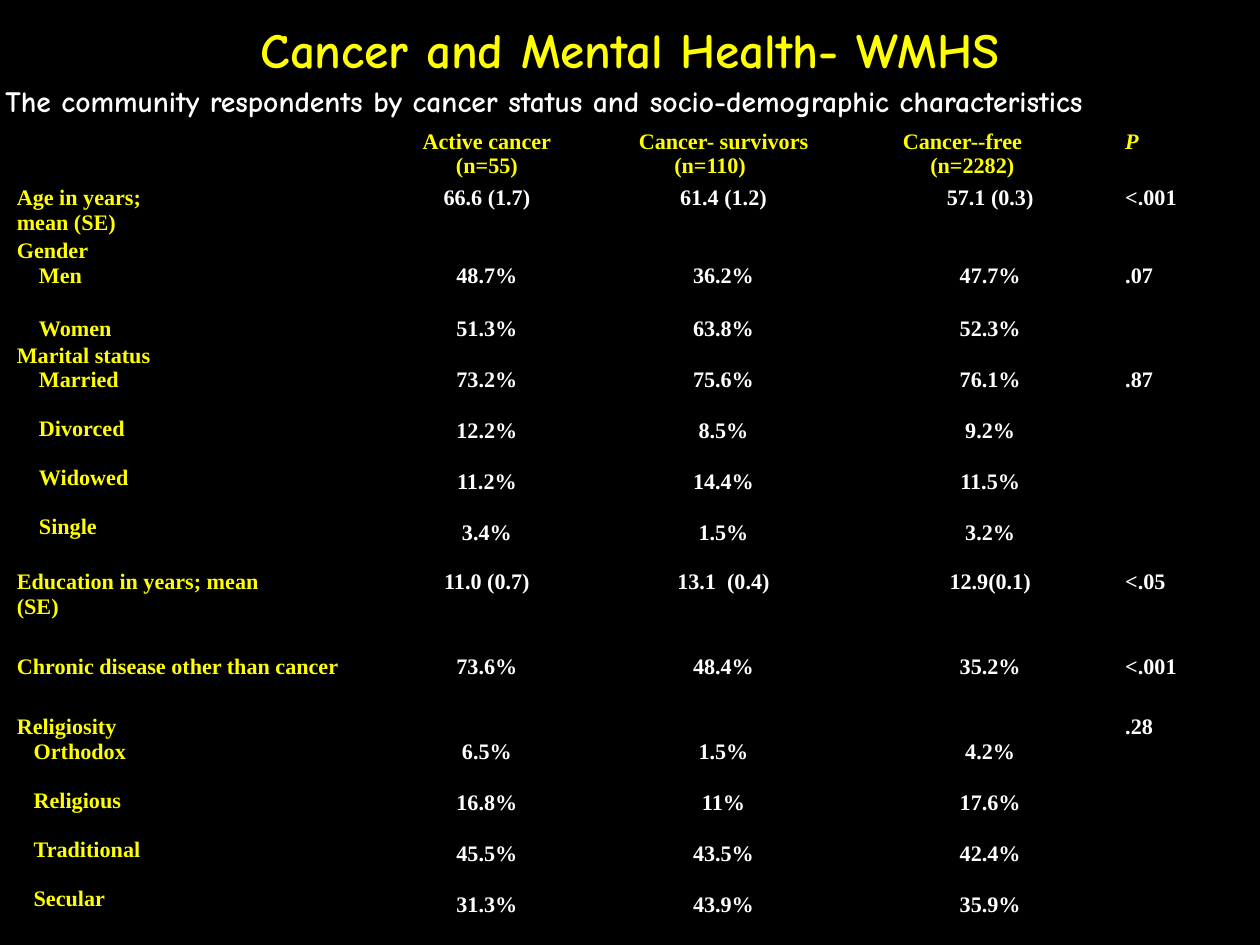
from lxml import etree
from pptx import Presentation
from pptx.dml.color import RGBColor
from pptx.enum.text import MSO_ANCHOR, PP_ALIGN
from pptx.oxml.ns import qn
from pptx.util import Inches, Pt

LEFT, CENTER = PP_ALIGN.LEFT, PP_ALIGN.CENTER
TOP, BOTTOM = MSO_ANCHOR.TOP, MSO_ANCHOR.BOTTOM
BLACK, YELLOW, WHITE = "000000", "FFFF00", "FFFFFF"
HEADING_FONT, TABLE_FONT = "Comic Neue", "Times New Roman"
NO_TABLE_STYLE = "{2D5ABB26-0587-4C30-8999-92F81FD0307C}"
GRID_COLUMNS, GRID_ROWS = 14.22, 10.67
LINE = Pt(19.9)

COLUMN_WIDTHS = [4.16, 2.33, 3.01, 3.01, 1.18]
HEADERS = [
    [("Active cancer", 0), ("(n=55)", 0)],
    [("Cancer- survivors", 0.53), ("(n=110)", 0.93)],
    [("Cancer--free", 0.5), ("(n=2282)", 0.81)],
]
HEADER_HEIGHT = 0.64
RESULTS = [
    (0.55, 0, ["66.6 (1.7)", "61.4 (1.2)", "57.1 (0.3)"], "<.001"),
    (0.55, 1, ["48.7%", "36.2%", "47.7%"], ".07"),
    (0.55, 1, ["51.3%", "63.8%", "52.3%"], ""),
    (0.55, 1, ["73.2%", "75.6%", "76.1%"], ".87"),
    (0.55, 1, ["12.2%", "8.5%", "9.2%"], ""),
    (0.55, 1, ["11.2%", "14.4%", "11.5%"], ""),
    (0.83, 1, ["3.4%", "1.5%", "3.2%"], ""),
    (0.68, 0, ["11.0 (0.7)", "13.1  (0.4)", "12.9(0.1)"], "<.05"),
    (0.68, 1, ["73.6%", "48.4%", "35.2%"], "<.001"),
    (0.83, 2, ["6.5%", "1.5%", "4.2%"], ".28"),
    (0.55, 1, ["16.8%", "11%", "17.6%"], ""),
    (0.55, 1, ["45.5%", "43.5%", "42.4%"], ""),
    (0.55, 1, ["31.3%", "43.9%", "35.9%"], ""),
]
LABELS = [
    (1, 1, 0, [("Age in years;", 0), ("mean (SE)", 0)]),
    (2, 1, 0, [("Gender", 0), ("Men", 0.25)]),
    (3, 1, 1, [("Women", 0.25)]),
    (4, 4, 0, [("Marital status", 0), ("Married", 0.25), ("Divorced", 0.25),
               ("Widowed", 0.25), ("Single", 0.25)]),
    (8, 1, 0, [("Education in years; mean", 0), ("(SE)", 0)]),
    (9, 1, 1, [("Chronic disease other than cancer", 0)]),
    (10, 4, 1, [("Religiosity", 0), ("Orthodox", 0.19), ("Religious", 0.19),
                ("Traditional", 0.19), ("Secular", 0.19)]),
]


def color(code):
    """Turn a hex string into a colour."""
    return RGBColor.from_string(code)


def set_values(target, values):
    """Set each named attribute of the target."""
    for name, value in values.items():
        setattr(target, name, value)


class SlideBuilder:
    """Hold the style and the current page on a one-inch grid."""

    def __init__(self):
        """Start a deck with one plain black page."""
        self.deck = Presentation()
        self.deck.slide_width = Inches(GRID_COLUMNS)
        self.deck.slide_height = Inches(GRID_ROWS)
        self.page = self.deck.slides.add_slide(self.deck.slide_layouts[6])
        fill = self.page.background.fill
        fill.solid()
        fill.fore_color.rgb = color(BLACK)

    def add_span(self, para, text, code, font, align=LEFT):
        """Add one styled span to a paragraph."""
        para.alignment = align
        span = para.add_run()
        span.text = text
        set_values(span.font, {"bold": True, **font})
        span.font.color.rgb = color(code)

    def heading(self, place, text, code, size, align, anchor):
        """Add a line of heading text."""
        box = self.page.shapes.add_textbox(*[Inches(cells) for cells in place])
        inset = Inches(0.06)
        set_values(box.text_frame, {
            "word_wrap": True, "vertical_anchor": anchor, "margin_left": inset,
            "margin_right": inset, "margin_top": inset, "margin_bottom": inset})
        font = {"name": HEADING_FONT, "size": Pt(size)}
        self.add_span(box.text_frame.paragraphs[0], text, code, font, align)

    def table(self, left, top, widths, heights):
        """Add an empty black table."""
        frame = self.page.shapes.add_table(
            len(heights), len(widths), Inches(left), Inches(top),
            Inches(sum(widths)), Inches(sum(heights)))
        table = frame.table
        set_values(table, {"first_row": False, "horz_banding": False})
        frame._element.find(".//" + qn("a:tableStyleId")).text = NO_TABLE_STYLE
        for column, width in zip(table.columns, widths):
            column.width = Inches(width)
        for row, height in zip(table.rows, heights):
            row.height = Inches(height)
        for cell in table.iter_cells():
            self.blacken(cell)
        return table

    def blacken(self, cell):
        """Give a cell black borders, black fill and narrow margins."""
        set_values(cell, {"margin_left": Inches(0.02), "margin_right": Inches(0.02),
                          "margin_top": 0, "margin_bottom": 0})
        properties = cell._tc.get_or_add_tcPr()
        for side in ("a:lnL", "a:lnR", "a:lnT", "a:lnB"):
            border = etree.SubElement(properties, qn(side), w=str(Pt(1)))
            fill = etree.SubElement(border, qn("a:solidFill"))
            etree.SubElement(fill, qn("a:srgbClr"), val=BLACK)
        cell.fill.solid()
        cell.fill.fore_color.rgb = color(BLACK)

    def cell_text(self, cell, lines, code, align=LEFT, drop=0, gap_from=None, italic=False):
        """Add lines with indents, a number of line heights below the cell top."""
        cell.margin_top = int(drop * LINE)
        font = {"name": TABLE_FONT, "size": Pt(18), "italic": italic}
        for index, (text, indent) in enumerate(lines):
            frame = cell.text_frame
            para = frame.add_paragraph() if index else frame.paragraphs[0]
            if indent:
                para._p.get_or_add_pPr().set("marL", str(Inches(indent)))
            if gap_from and index >= gap_from:
                para.space_before = LINE
            self.add_span(para, text, code, font, align)


def main():
    """Build and save the slide."""
    slide = SlideBuilder()
    slide.heading((0, -0.54, GRID_COLUMNS, 1.48), "Cancer and Mental Health- WMHS",
                  YELLOW, 40, CENTER, BOTTOM)
    slide.heading((0, 0.88, GRID_COLUMNS, 1.6),
                  "The community respondents by cancer status and "
                  "socio-demographic characteristics", WHITE, 24, LEFT, TOP)
    heights = [HEADER_HEIGHT] + [result[0] for result in RESULTS]
    table = slide.table(0.17, 1.46, COLUMN_WIDTHS, heights)
    for column, lines in enumerate(HEADERS, 1):
        align = LEFT if lines[0][1] else CENTER
        slide.cell_text(table.cell(0, column), lines, YELLOW, align)
    slide.cell_text(table.cell(0, 4), [("P", 0)], YELLOW, italic=True)
    for row, span, drop, lines in LABELS:
        cell = table.cell(row, 0)
        if span > 1:
            cell.merge(table.cell(row + span - 1, 0))
        slide.cell_text(cell, lines, YELLOW, drop=drop, gap_from=2)
    for row, (_, drop, values, probability) in enumerate(RESULTS, 1):
        for column, value in enumerate(values, 1):
            slide.cell_text(table.cell(row, column), [(value, 0)], WHITE, CENTER, drop)
        if probability:
            slide.cell_text(table.cell(row, 4), [(probability, 0)], WHITE, drop=min(drop, 1))
    slide.deck.save("out.pptx")


if __name__ == "__main__":
    main()
